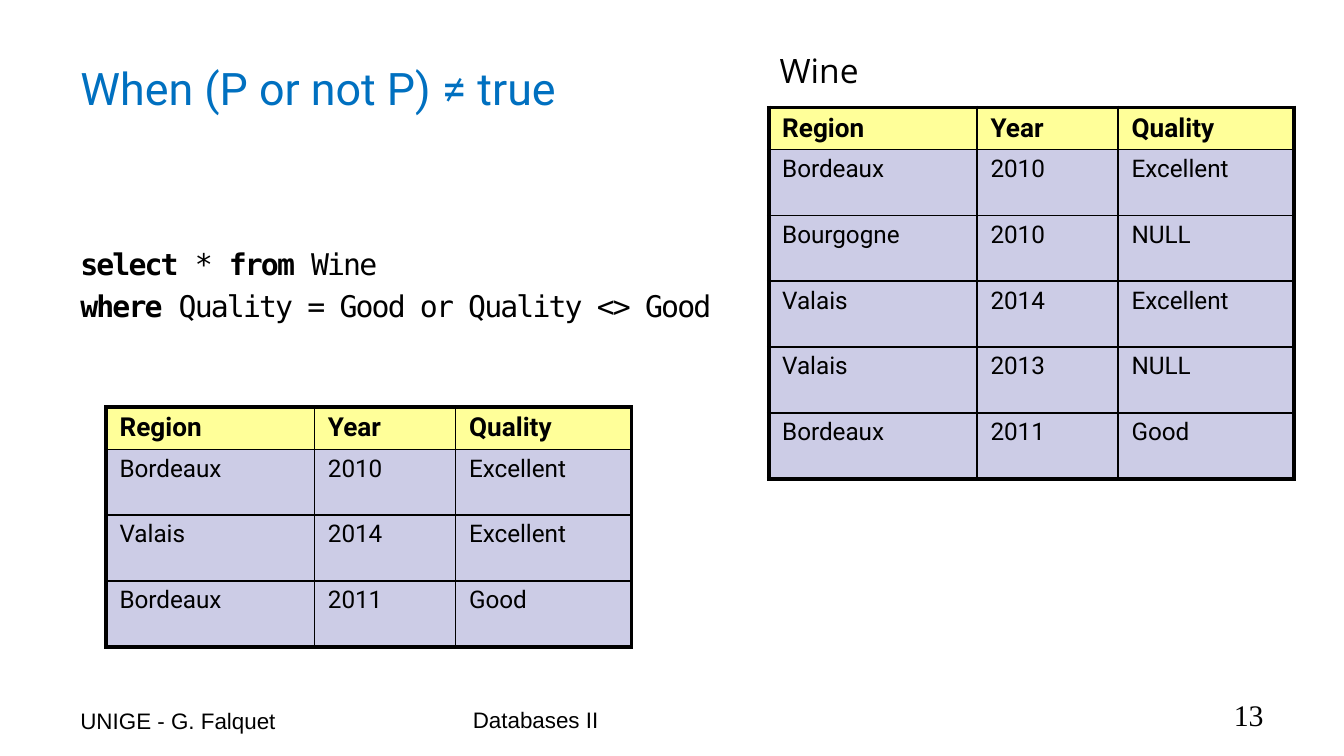
from pptx import Presentation
from pptx.dml.color import RGBColor
from pptx.enum.text import MSO_ANCHOR, PP_ALIGN
from pptx.oxml import parse_xml
from pptx.oxml.ns import nsdecls
from pptx.util import Inches, Pt

TOP, MIDDLE, BOTTOM = MSO_ANCHOR.TOP, MSO_ANCHOR.MIDDLE, MSO_ANCHOR.BOTTOM
LEFT, CENTER, RIGHT = PP_ALIGN.LEFT, PP_ALIGN.CENTER, PP_ALIGN.RIGHT

# Content
COLORS = {"title": "0070C0", "text": "000000", "header": "FFFF99", "body": "CCCCE6"}
HEADER = ("Region", "Year", "Quality")
WINES = [
    ("Bordeaux", "2010", "Excellent"),
    ("Bourgogne", "2010", "NULL"),
    ("Valais", "2014", "Excellent"),
    ("Valais", "2013", "NULL"),
    ("Bordeaux", "2011", "Good"),
]
RESULT = [wine for wine in WINES if wine[2] != "NULL"]
QUERY = [  # lines of (text, is keyword)
    [("select", True), (" * ", False), ("from", True), (" Wine", False)],
    [("where", True), (" Quality = Good or Quality <> Good", False)],
]
# text, place, font, size, colour, alignment, anchor, wrap
LABELS = [
    ("When (P or not P) ≠ true", (0.5, 0.31, 8.83, 0.69), "Roboto", 24, "title", LEFT, MIDDLE, True),
    ("Wine", (5.7, 0.32, 0.79, 0.4), "Open Sans", 18, "text", CENTER, TOP, False),
    ("UNIGE - G. Falquet", (0.5, 5.12, 2.33, 0.39), "Arial", 12, "text", LEFT, BOTTOM, True),
    ("Databases II", (3.42, 5.12, 3.17, 0.38), "Arial", 12, "text", LEFT, BOTTOM, True),
    ("13", (7.17, 5.12, 2.33, 0.38), "Times New Roman", 16, "text", RIGHT, BOTTOM, True),
]

# Slide of 16 by 9, and table grid
WIDTH = 10
HEIGHT = WIDTH * 9 / 16
COLUMNS = (1.55, 1.05, 1.31)
HEADER_ROW, BODY_ROW = 0.31, 0.49
THICK, THIN = 2.25, 1


def color(name):
    return RGBColor.from_string(COLORS[name])


def style(font, name, size, tint="text", bold=False):
    font.name, font.size, font.bold = name, Pt(size), bold
    font.color.rgb = color(tint)


def add_box(page, place, anchor=TOP, wrap=True):
    frame = page.shapes.add_textbox(*map(Inches, place)).text_frame
    frame.word_wrap, frame.vertical_anchor = wrap, anchor
    return frame


def add_borders(cell, widths):
    properties = cell._tc.get_or_add_tcPr()
    for index, (side, width) in enumerate(widths.items()):
        properties.insert(index, parse_xml(
            f'<a:ln{side} {nsdecls("a")} w="{Pt(width)}"><a:solidFill>'
            f'<a:srgbClr val="{COLORS["text"]}"/></a:solidFill></a:ln{side}>'))


def add_wine_table(page, left, top, wines):
    rows = [HEADER, *wines]
    heights = [HEADER_ROW] + [BODY_ROW] * len(wines)
    place = (left, top, sum(COLUMNS), sum(heights))
    table = page.shapes.add_table(len(rows), len(COLUMNS), *map(Inches, place)).table
    for column, width in zip(table.columns, COLUMNS):
        column.width = Inches(width)
    for r, (values, height) in enumerate(zip(rows, heights)):
        table.rows[r].height = Inches(height)
        for c, value in enumerate(values):
            cell = table.cell(r, c)
            cell.margin_top = cell.margin_bottom = Inches(0.04)
            cell.fill.solid()
            cell.fill.fore_color.rgb = color("body" if r else "header")
            cell.text = value
            style(cell.text_frame.paragraphs[0].font, "Roboto", 13 if r else 14, bold=r == 0)
            outer = {"L": c == 0, "R": c == len(COLUMNS) - 1,
                     "T": r == 0, "B": r == len(rows) - 1}
            add_borders(cell, {side: THICK if edge else THIN for side, edge in outer.items()})


deck = Presentation()
deck.slide_width, deck.slide_height = Inches(WIDTH), Inches(HEIGHT)
page = deck.slides.add_slide(deck.slide_layouts[6])

# Title, table name and footer
for text, place, name, size, tint, align, anchor, wrap in LABELS:
    para = add_box(page, place, anchor, wrap).paragraphs[0]
    para.text, para.alignment = text, align
    style(para.font, name, size, tint)

# Query
frame = add_box(page, (0.5, 1.78, 9, 2.72))
for number, line in enumerate(QUERY):
    para = frame.add_paragraph() if number else frame.paragraphs[0]
    para.space_before = Pt(3.2)
    style(para.font, "DejaVu Sans Mono", 16)
    for text, keyword in line:
        span = para.add_run()
        span.text, span.font.bold = text, keyword
        span._r.get_or_add_rPr().set("spc", "-100")  # one point tighter

# Source table and query result
add_wine_table(page, 5.72, 0.8, WINES)
add_wine_table(page, 0.79, 3.03, RESULT)

deck.save("out.pptx")
